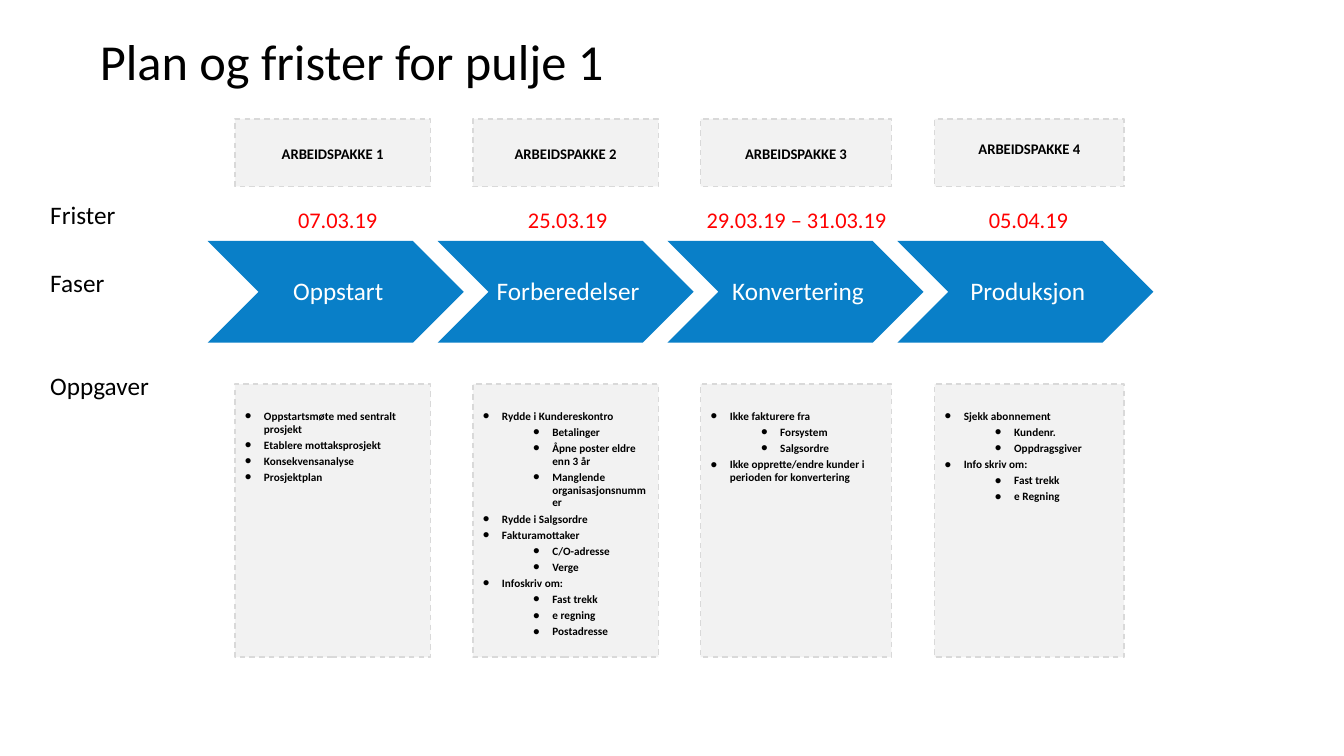
from pptx import Presentation
from pptx.dml.color import RGBColor
from pptx.enum.dml import MSO_LINE_DASH_STYLE as DASH
from pptx.enum.shapes import MSO_SHAPE as SHAPE
from pptx.enum.text import MSO_ANCHOR as ANCHOR, PP_ALIGN as ALIGN
from pptx.oxml.ns import qn
from pptx.util import Inches, Pt
from lxml.etree import SubElement

COLORS = {"text": "000000", "phase": "097FC8", "phase_text": "FFFFFF",
          "deadline": "FF0000", "box": "F2F2F2", "border": "D9D9D9"}
FONT = "Calibri"
CHEVRON_LEFT, CHEVRON_STEP = 2.06, 2.28

PACKAGES = [
    {"name": "ARBEIDSPAKKE 1", "left": 2.33, "width": 1.94, "name_top": 0.27,
     "deadline": "07.03.19", "deadline_center": 3.35, "phase": "Oppstart",
     "tasks": [(0, "Oppstartsmøte med sentralt prosjekt"),
               (0, "Etablere mottaksprosjekt"),
               (0, "Konsekvensanalyse"), (0, "Prosjektplan")]},
    {"name": "ARBEIDSPAKKE 2", "left": 4.69, "width": 1.84, "name_top": 0.27,
     "deadline": "25.03.19", "deadline_center": 5.63, "phase": "Forberedelser",
     "tasks": [(0, "Rydde i Kundereskontro"), (1, "Betalinger"),
               (1, "Åpne poster eldre enn 3 år"),
               (1, "Manglende organisasjonsnummer"),
               (0, "Rydde i Salgsordre"), (0, "Fakturamottaker"),
               (1, "C/O-adresse"), (1, "Verge"), (0, "Infoskriv om:"),
               (1, "Fast trekk"), (1, "e regning"), (1, "Postadresse")]},
    {"name": "ARBEIDSPAKKE 3", "left": 6.95, "width": 1.89, "name_top": 0.27,
     "deadline": "29.03.19 – 31.03.19", "deadline_center": 7.9,
     "phase": "Konvertering",
     "tasks": [(0, "Ikke fakturere fra"), (1, "Forsystem"), (1, "Salgsordre"),
               (0, "Ikke opprette/endre kunder i perioden for konvertering")]},
    {"name": "ARBEIDSPAKKE 4", "left": 9.27, "width": 1.88, "name_top": 0.22,
     "deadline": "05.04.19", "deadline_center": 10.2, "phase": "Produksjon",
     "tasks": [(0, "Sjekk abonnement"), (1, "Kundenr."), (1, "Oppdragsgiver"),
               (0, "Info skriv om:"), (1, "Fast trekk"), (1, "e Regning")]},
]
ROW_LABELS = [("Frister", 1.93), ("Faser", 2.6), ("Oppgaver", 3.62)]


def color(name):
    """Return the named colour."""
    return RGBColor.from_string(COLORS[name])


def write(paragraph, text, size=18, fill="text", bold=False,
          align=ALIGN.LEFT, spacing=1.0):
    """Write formatted text into a paragraph."""
    run = paragraph.add_run()
    run.text = text
    run.font.name = FONT
    run.font.size = Pt(size)
    run.font.bold = bold
    run.font.color.rgb = color(fill)
    paragraph.alignment = align
    paragraph.line_spacing = spacing


def add_bullet(paragraph, level):
    """Give a paragraph a hanging bullet at the indent of its level."""
    paragraph.level = level
    properties = paragraph._p.get_or_add_pPr()
    properties.set("marL", str(Inches(0.19 + 0.5 * level)))
    properties.set("indent", str(Inches(-0.19)))
    SubElement(properties, qn("a:buSzPct"), val="170000")
    SubElement(properties, qn("a:buFont"), typeface="Arial")
    SubElement(properties, qn("a:buChar"), char="•")


def add_text(slide, text, left, top, width, height, anchor=ANCHOR.TOP, **style):
    """Add a text box with one line of text."""
    box = slide.shapes.add_textbox(Inches(left), Inches(top), Inches(width), Inches(height))
    frame = box.text_frame
    frame.word_wrap = True
    frame.vertical_anchor = anchor
    write(frame.paragraphs[0], text, **style)


def add_filled(slide, kind, fill, left, top, width, height):
    """Add a flat filled shape without a line."""
    shape = slide.shapes.add_shape(kind, Inches(left), Inches(top), Inches(width), Inches(height))
    shape.shadow.inherit = False
    shape.fill.solid()
    shape.fill.fore_color.rgb = color(fill)
    shape.line.fill.background()
    return shape


def add_dashed_box(slide, left, top, width, height, text_top):
    """Add a grey dashed box and return its text frame."""
    box = add_filled(slide, SHAPE.RECTANGLE, "box", left, top, width, height)
    box.line.color.rgb = color("border")
    box.line.width = Pt(1)
    box.line.dash_style = DASH.DASH
    frame = box.text_frame
    frame.word_wrap = True
    frame.vertical_anchor = ANCHOR.TOP
    frame.margin_top = Inches(text_top)
    return frame


def add_phase(slide, text, left):
    """Add a chevron that names a phase."""
    chevron = add_filled(slide, SHAPE.CHEVRON, "phase", left, 2.39, 2.54, 1.01)
    frame = chevron.text_frame
    frame.word_wrap = False
    frame.vertical_anchor = ANCHOR.MIDDLE
    frame.margin_left = Inches(0.08)
    frame.margin_right = frame.margin_top = frame.margin_bottom = Inches(0.03)
    write(frame.paragraphs[0], text, fill="phase_text", align=ALIGN.CENTER, spacing=0.9)


def add_tasks(slide, tasks, left, width):
    """Add a box with a two-level task list."""
    frame = add_dashed_box(slide, left, 3.81, width, 2.71, 0.26)
    for index, (level, task) in enumerate(tasks):
        paragraph = frame.add_paragraph() if index else frame.paragraphs[0]
        write(paragraph, task, size=8, bold=True, spacing=0.95)
        paragraph.space_before = Pt(2.4 if index else 0)
        add_bullet(paragraph, level)


def add_title(slide, text):
    """Place and fill the title placeholder."""
    title = slide.shapes.title
    title.left, title.top = Inches(0.89), Inches(-0.49)
    title.width, title.height = Inches(10.7), Inches(1.45)
    title.text_frame.vertical_anchor = ANCHOR.BOTTOM
    write(title.text_frame.paragraphs[0], text, size=36, spacing=0.9)


def main():
    """Build the slide and save it."""
    presentation = Presentation()
    presentation.slide_width, presentation.slide_height = Inches(13.33), Inches(7.5)
    slide = presentation.slides.add_slide(presentation.slide_layouts[5])
    add_title(slide, "Plan og frister for pulje 1")
    for text, top in ROW_LABELS:
        add_text(slide, text, 0.4, top, 1.53, 0.4)
    for index, package in enumerate(PACKAGES):
        left, width = package["left"], package["width"]
        add_phase(slide, package["phase"], CHEVRON_LEFT + index * CHEVRON_STEP)
        heading = add_dashed_box(slide, left, 1.18, width, 0.67, package["name_top"])
        write(heading.paragraphs[0], package["name"], size=10.5, bold=True,
              align=ALIGN.CENTER, spacing=0.95)
        add_text(slide, package["deadline"], package["deadline_center"] - 1.12, 2.02,
                 2.24, 0.31, ANCHOR.MIDDLE, size=16, fill="deadline", align=ALIGN.CENTER)
        add_tasks(slide, package["tasks"], left, width)
    presentation.save("out.pptx")


if __name__ == "__main__":
    main()
